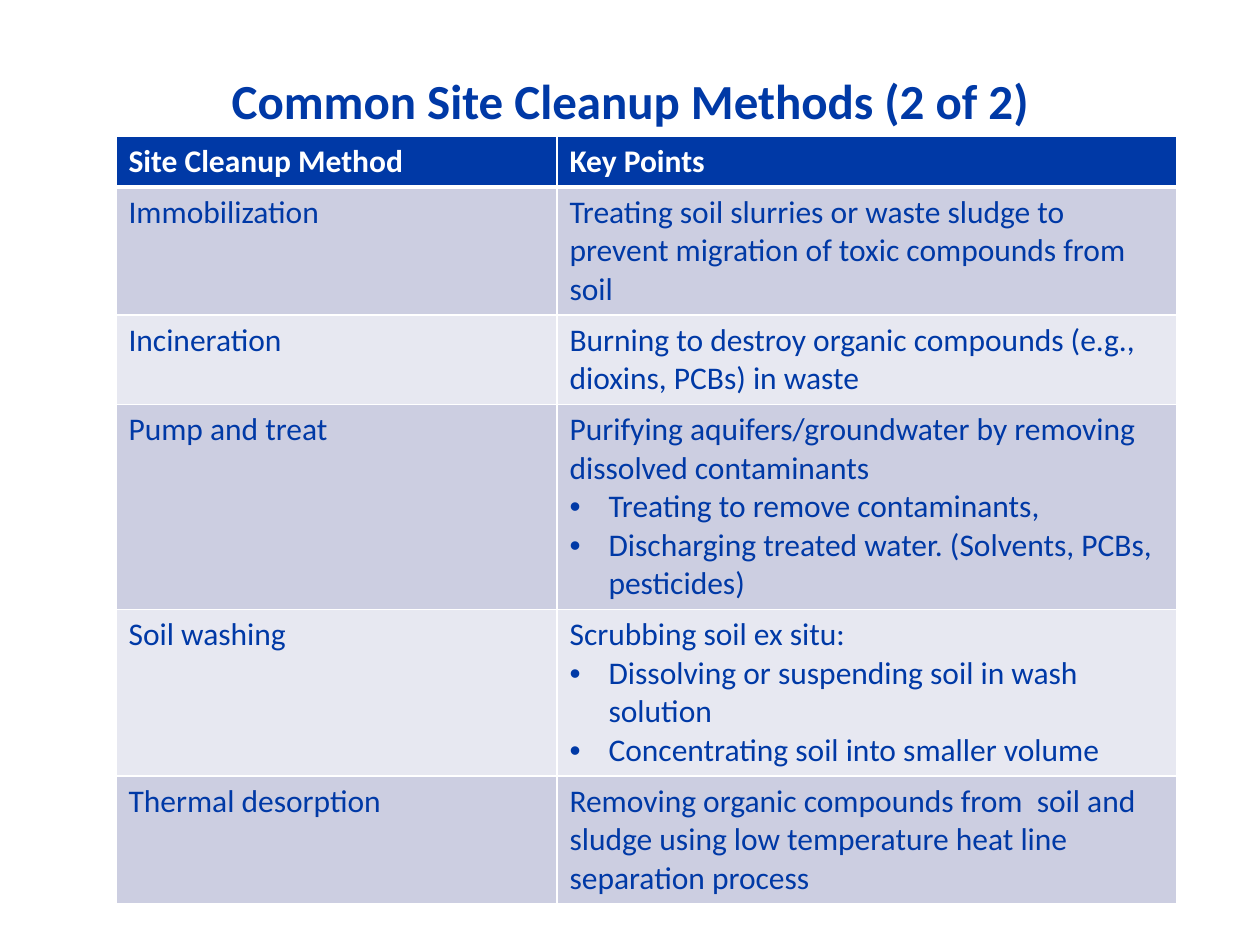
from lxml.etree import SubElement
from pptx import Presentation
from pptx.dml.color import RGBColor
from pptx.enum.text import MSO_ANCHOR, MSO_AUTO_SIZE, PP_ALIGN
from pptx.oxml.ns import qn
from pptx.util import Emu, Pt

NAVY = RGBColor(0x00, 0x39, 0xA6)
WHITE = RGBColor(0xFF, 0xFF, 0xFF)
DARK = RGBColor(0xCC, 0xCE, 0xE1)
LIGHT = RGBColor(0xE7, 0xE8, 0xF1)
FONT = "Calibri"
COLS = [441, 620]
ROWS = [
    (47, "Site Cleanup Method", ["Key Points"]),
    (117, "Immobilization", [
        "Treating soil slurries or waste sludge to prevent migration of toxic compounds from soil"]),
    (82, "Incineration", [
        "Burning to destroy organic compounds (e.g., dioxins, PCBs) in waste"]),
    (188, "Pump and treat", [
        "Purifying aquifers/groundwater by removing dissolved contaminants",
        "Treating to remove contaminants,",
        "Discharging treated water. (Solvents, PCBs, pesticides)"]),
    (152, "Soil washing", [
        "Scrubbing soil ex situ:",
        "Dissolving or suspending soil in wash solution",
        "Concentrating soil into smaller volume"]),
    (117, "Thermal desorption", [
        "Removing organic compounds from  soil and sludge using low temperature heat line "
        "separation process"]),
]


def px(num):
    """Turn px into EMU."""
    return Emu(round(num * 914400 / 126))


def write(frame, lines, size=18, color=NAVY, bold=False, align=PP_ALIGN.LEFT, lead=None):
    """Write a first line and, below it, bulleted lines."""
    for num, line in enumerate(lines):
        para = frame.add_paragraph() if num else frame.paragraphs[0]
        if num:
            props = para._p.get_or_add_pPr()
            props.set("marL", str(px(39)))
            props.set("indent", str(-px(39)))
            SubElement(props, qn("a:buFont"), typeface="Arial")
            SubElement(props, qn("a:buChar"), char="•")
        para.alignment = align
        if lead:
            para.line_spacing = Pt(lead)
        run = para.add_run()
        run.text = line
        font = run.font
        font.name, font.size, font.bold = FONT, Pt(size), bold
        font.color.rgb = color


def edge(cell, base):
    """Draw the white borders of a cell, with the given base width."""
    props = cell._tc.get_or_add_tcPr()
    for side, width in (("L", 1), ("R", 1), ("T", 1), ("B", base)):
        line = SubElement(props, qn("a:ln" + side), w=str(Pt(width)))
        fill = SubElement(line, qn("a:solidFill"))
        SubElement(fill, qn("a:srgbClr"), val=str(WHITE))


def head(slide, left, top, width, height):
    """Place and fill the title."""
    title = slide.shapes.title
    title.left, title.top = px(left), px(top)
    title.width, title.height = px(width), px(height)
    frame = title.text_frame
    frame.auto_size = MSO_AUTO_SIZE.NONE
    frame.vertical_anchor = MSO_ANCHOR.BOTTOM
    write(frame, ["Common Site Cleanup Methods (2 of 2)"], size=28, bold=True,
          align=PP_ALIGN.CENTER, lead=30)


def grid(slide, left, top, width, height):
    """Build the table of methods."""
    shape = slide.shapes.add_table(len(ROWS), len(COLS), px(left), px(top),
                                   px(width), px(height))
    table = shape.table
    for col, wide in zip(table.columns, COLS):
        col.width = px(wide)
    for num, (tall, name, points) in enumerate(ROWS):
        table.rows[num].height = px(tall)
        first = num == 0
        shade = NAVY if first else DARK if num % 2 else LIGHT
        for cell, lines in zip(table.rows[num].cells, ([name], points)):
            edge(cell, 3 if first else 1)
            cell.fill.solid()
            cell.fill.fore_color.rgb = shade
            write(cell.text_frame, lines, color=WHITE if first else NAVY, bold=first)
        if first:
            for cell in table.rows[num].cells:
                cell.vertical_anchor = MSO_ANCHOR.TOP
    shape.height = px(height)


def main():
    """Build and save the slide."""
    deck = Presentation()
    deck.slide_width, deck.slide_height = px(1260), px(945)
    slide = deck.slides.add_slide(deck.slide_layouts[5])
    head(slide, 63, 38, 1134, 98)
    grid(slide, 116, 136, sum(COLS), 756)
    deck.save("out.pptx")


if __name__ == "__main__":
    main()
